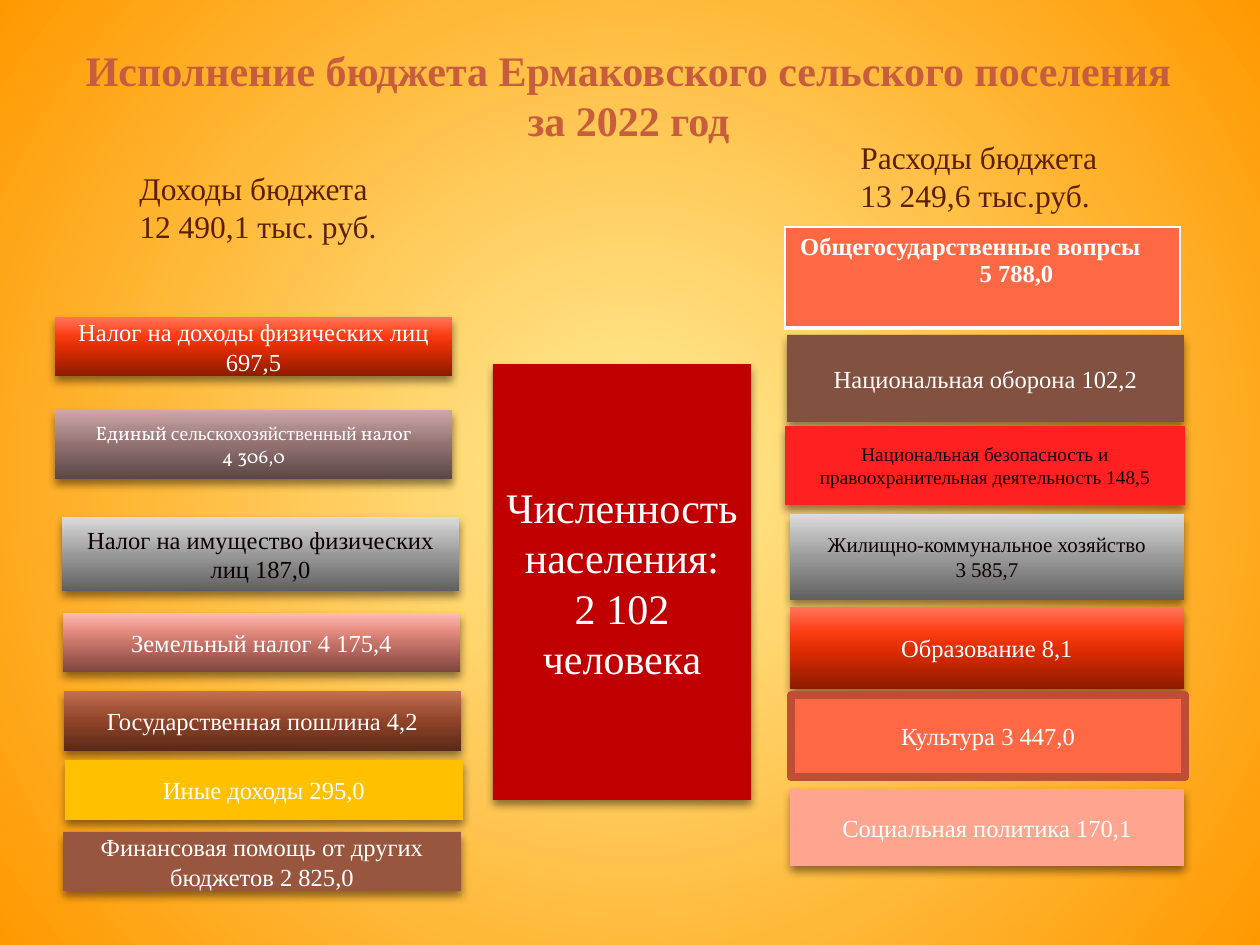
"""Build a one-slide overview of a rural settlement's 2022 budget."""
from pptx import Presentation, util as u
from pptx.dml.color import RGBColor
from pptx.enum import shapes, text
from pptx.oxml import parse_xml
from pptx.oxml.ns import nsdecls, qn

PX = 914400 / 126
SERIF, OLD_STYLE = "Times New Roman", "Vollkorn"
rgb = RGBColor.from_string
WHITE, INK, BROWN = rgb("FFFFFF"), rgb("0E0000"), rgb("5C1F00")
TITLE, CRIMSON, YELLOW = rgb("C75D3C"), rgb("C00000"), rgb("FFC000")
SIENNA, UMBER, RED = rgb("98563E"), rgb("825140"), rgb("FF2121")
CORAL, BORDER, SALMON = rgb("FF6845"), rgb("BD4D33"), rgb("FFA48F")
BACKDROP = rgb("FFEC97"), rgb("FF9900")
FIRE = rgb("8E1B00"), rgb("E22D03"), rgb("FD3E15"), rgb("FF755A")
MAUVE = rgb("5B4646"), rgb("927171"), rgb("AA8888"), rgb("CFA8A8")
GREY = rgb("606060"), rgb("9A9A9A"), rgb("B5B5B5"), rgb("DCDCDC")
RUST = rgb("5A2917"), rgb("8F4328"), rgb("A25438"), rgb("C56F52")
ROSE = rgb("7E463F"), rgb("C87469"), rgb("E58C81"), rgb("FFBDB5")

HEADING = "Исполнение бюджета Ермаковского сельского поселения за 2022 год"
CAPTIONS = [
    ((127, 163, 273, 89), ["Доходы бюджета", "12 490,1 тыс. руб."]),
    ((848, 132, 388, 90), ["Расходы бюджета", "13 249,6 тыс.руб."]),
]
FARM_TAX = [("Единый ", OLD_STYLE), ("сельскохозяйственный", SERIF), (" налог", OLD_STYLE)]
BOXES = [
    ((55, 317, 397, 59), FIRE, ["Налог на доходы физических лиц 697,5"], 14, WHITE),
    ((55, 410, 397, 69), MAUVE, [FARM_TAX, [("4 306,0", OLD_STYLE)]], 11, WHITE),
    ((62, 517, 397, 74), GREY, ["Налог на имущество физических лиц 187,0"], 14, INK),
    ((63, 613, 397, 59), ROSE, ["Земельный налог 4 175,4"], 14, WHITE),
    ((64, 691, 397, 60), RUST, ["Государственная пошлина 4,2"], 14, WHITE),
    ((65, 760, 398, 60), YELLOW, ["Иные доходы 295,0"], 14, WHITE),
    ((63, 832, 398, 59), SIENNA, ["Финансовая помощь от других бюджетов 2 825,0"], 14, WHITE),
    ((493, 364, 258, 436), CRIMSON, ["Численность населения:", "2 102", "человека"], 24, WHITE),
    ((787, 335, 397, 87), UMBER, ["Национальная оборона 102,2"], 14, WHITE),
    ((785, 426, 400, 79), RED,
     ["Национальная безопасность и правоохранительная деятельность 148,5"], 11, INK),
    ((790, 514, 394, 86), GREY, ["Жилищно-коммунальное хозяйство", "3 585,7"], 12, INK),
    ((790, 607, 394, 82), FIRE, ["Образование 8,1"], 14, WHITE),
    ((790, 789, 394, 77), SALMON, ["Социальная политика 170,1"], 14, WHITE),
]
CULTURE = ((791, 695, 394, 82), CORAL, ["Культура 3 447,0"], 14, WHITE)
GENERAL_AT = (785, 227, 395, 101)
GENERAL = [("Общегосударственные вопрсы", "marR", 24), ("5 788,0", "marL", 92)]


def px(*values):
    return [round(v * PX) for v in values]


def gradient(stops, direction):
    stops = "".join(f'<a:gs pos="{pos * 1000}"><a:srgbClr val="{c}"/></a:gs>' for pos, c in stops)
    return parse_xml(f'<a:gradFill {nsdecls("a")} rotWithShape="1">'
                     f'<a:gsLst>{stops}</a:gsLst>{direction}</a:gradFill>')


def style(p, size, color, align=None, bold=None, name=SERIF):
    p.alignment = align
    f = p.font
    f.size, f.bold, f.name = u.Pt(size), bold, name
    f.color.rgb = color


def write(tf, lines, size, color, align=None):
    tf.word_wrap = True
    for i, line in enumerate(lines):
        p = tf.add_paragraph() if i else tf.paragraphs[0]
        style(p, size, color, align)
        for words, name in [(line, SERIF)] if isinstance(line, str) else line:
            r = p.add_run()
            r.text, r.font.name = words, name


def add_box(s, at, fill, lines, size, color):
    sp = s.shapes.add_shape(shapes.MSO_SHAPE.RECTANGLE, *px(*at))
    sp.shadow.inherit = False
    sp.line.fill.background()
    if isinstance(fill, RGBColor):
        sp.fill.solid()
        sp.fill.fore_color.rgb = fill
    else:
        sp.element.spPr.find(qn("a:prstGeom")).addnext(
            gradient(zip((0, 50, 70, 100), fill), '<a:lin ang="16200000" scaled="0"/>'))
    sp.text_frame.vertical_anchor = text.MSO_ANCHOR.MIDDLE
    write(sp.text_frame, lines, size, color, text.PP_ALIGN.CENTER)
    return sp


def add_shadow(sp):
    sp.element.spPr.find(qn("a:effectLst")).append(parse_xml(
        f'<a:outerShdw {nsdecls("a")} blurRad="{u.Pt(5)}" dist="{u.Pt(3)}" dir="5400000" '
        'rotWithShape="0"><a:srgbClr val="000000"><a:alpha val="45000"/></a:srgbClr>'
        '</a:outerShdw>'))


def add_general_table(s):
    cell = s.shapes.add_table(1, 1, *px(*GENERAL_AT)).table.cell(0, 0)
    cell.fill.solid()
    cell.fill.fore_color.rgb = CORAL
    tf = cell.text_frame
    for i, (words, side, indent) in enumerate(GENERAL):
        p = tf.add_paragraph() if i else tf.paragraphs[0]
        p.text = words
        style(p, 14, WHITE, text.PP_ALIGN.CENTER, True)
        p._p.get_or_add_pPr().set(side, str(px(indent)[0]))
    tcPr = cell._tc.get_or_add_tcPr()
    for i, (side, width) in enumerate(zip("LRTB", (1, 1, 1, 3))):
        tcPr.insert(i, parse_xml(
            f'<a:ln{side} {nsdecls("a")} w="{u.Pt(width)}"><a:solidFill>'
            f'<a:srgbClr val="{WHITE}"/></a:solidFill></a:ln{side}>'))


def main():
    prs = Presentation()
    prs.slide_width, prs.slide_height = px(1260, 945)
    s = prs.slides.add_slide(prs.slide_layouts[5])

    s.background.fill.gradient()
    old = s.element.find(".//" + qn("a:gradFill"))
    old.getparent().replace(old, gradient(
        zip((0, 100), BACKDROP),
        '<a:path path="circle"><a:fillToRect l="50000" t="50000" r="50000" b="50000"/></a:path>'))

    title = s.shapes.title
    title.left, title.top, title.width, title.height = px(68, 38, 1121, 115)
    tf = title.text_frame
    tf.text, tf.vertical_anchor = HEADING, text.MSO_ANCHOR.TOP
    tf.auto_size = text.MSO_AUTO_SIZE.NONE
    style(tf.paragraphs[0], 24, TITLE, text.PP_ALIGN.CENTER, True)

    for at, lines in CAPTIONS:
        write(s.shapes.add_textbox(*px(*at)).text_frame, lines, 18, BROWN)
    for box in BOXES:
        add_shadow(add_box(s, *box))
    culture = add_box(s, *CULTURE)
    culture.line.color.rgb = BORDER
    culture.line.width = u.Pt(4.33)
    add_general_table(s)
    prs.save("out.pptx")


if __name__ == "__main__":
    main()
